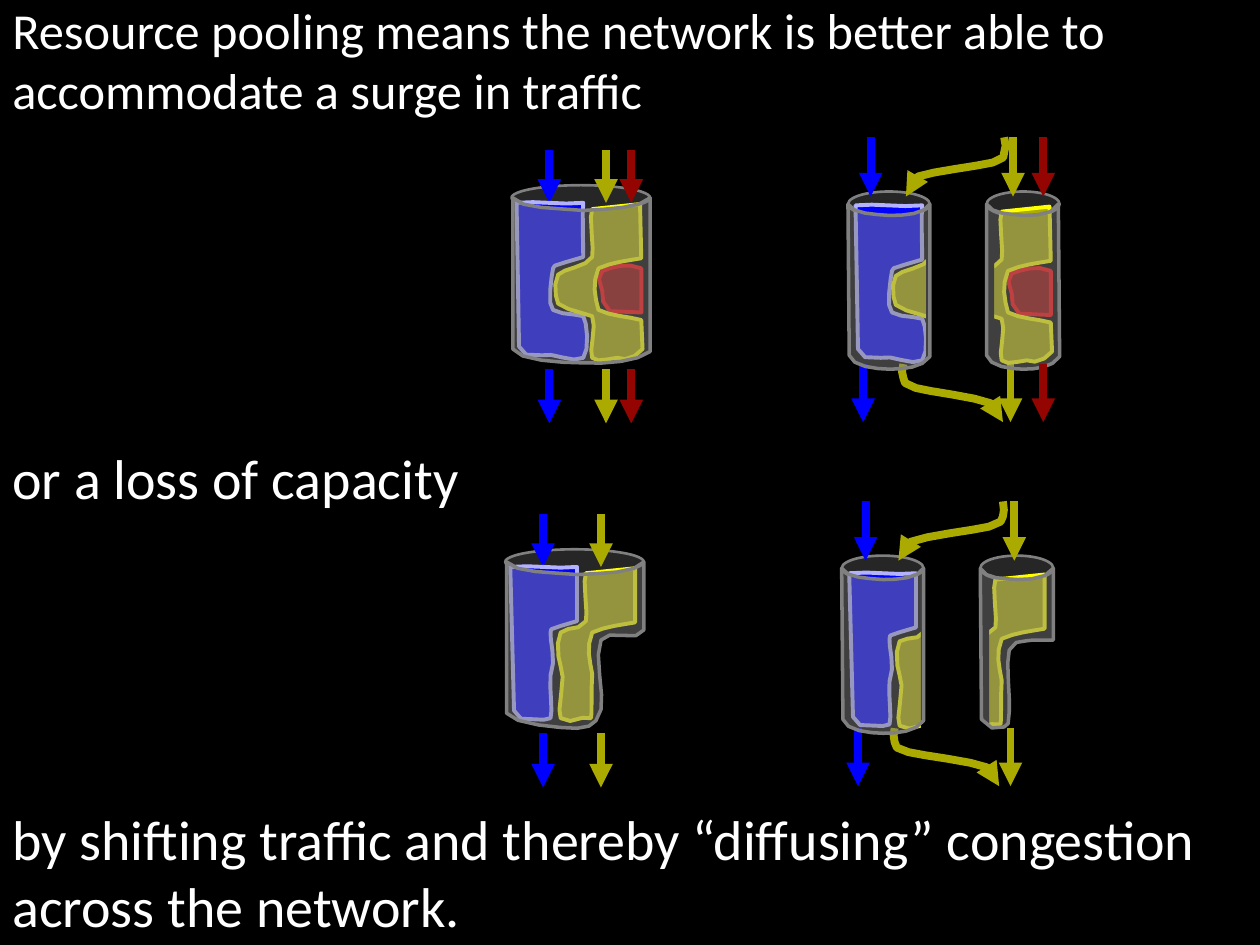
import math

import pptx
import pptx.dml.color
import pptx.enum.shapes
import pptx.enum.text
import pptx.oxml.ns
import pptx.util
from lxml import etree
from pptx.util import Inches

BLUE, YELLOW, RED = "0000FF", "AAAA00", "940400"
RIMS = {BLUE: "B2B2FF", YELLOW: "FFFF00", RED: "FF0101"}
BLACK, WHITE, GREY = "000000", "FFFFFF", "808080"
SHAPE = pptx.enum.shapes.MSO_SHAPE
CHORD, MAX_STEPS = 0.1, 4

# Outlines: a start point, then L (lines) or C (cubic curves), in inches
SURGE_RED = """5.09 2.13 C 4.98 2.08 4.86 2.12 4.78 2.15 4.71 2.17 4.78 2.25 4.78 2.31
    4.78 2.36 4.78 2.43 4.84 2.47 4.89 2.47 5.04 2.48 5.09 2.48"""
SURGE_BLUE = """4.1 1.61 C 4.27 1.59 4.45 1.63 4.63 1.61 4.62 1.65 4.63 2 4.63 2.04
    4.47 2.09 4.36 2.11 4.39 2.13 4.38 2.18 4.34 2.43 4.39 2.46
    4.44 2.5 4.59 2.49 4.63 2.51 4.66 2.55 4.68 2.78 4.63 2.84
    4.55 2.89 4.38 2.79 4.3 2.82 4.2 2.84 4.13 2.81 4.12 2.75"""
SURGE_YELLOW = """5.1 2.77 L 5.09 2.54 C 4.98 2.51 4.85 2.51 4.75 2.46
    4.72 2.35 4.7 2.25 4.75 2.13 4.86 2.08 4.98 2.07 5.09 2.05 L 5.08 1.62 4.7 1.66
    C 4.67 1.68 4.72 2.01 4.7 2.04 4.66 2.12 4.47 2.13 4.43 2.18
    4.39 2.24 4.41 2.37 4.43 2.41 4.48 2.46 4.66 2.49 4.7 2.51
    4.74 2.58 4.67 2.8 4.7 2.84 4.74 2.88 4.81 2.85 4.9 2.84 4.95 2.87 5.05 2.84 5.1 2.77"""
SURGE_SPILL = """7.78 2.78 L 7.77 2.55 C 7.66 2.52 7.53 2.52 7.43 2.47
    7.4 2.36 7.38 2.26 7.43 2.14 7.54 2.09 7.66 2.08 7.77 2.06 L 7.7 1.85
    C 7.61 1.83 7.53 1.82 7.44 1.8 7.41 1.82 7.4 2.02 7.38 2.05
    7.34 2.13 7.15 2.14 7.11 2.19 7.07 2.25 7.09 2.38 7.11 2.42
    7.16 2.47 7.34 2.5 7.38 2.52 7.43 2.59 7.41 2.75 7.44 2.79
    7.48 2.84 7.54 2.8 7.64 2.79 7.69 2.82 7.73 2.85 7.78 2.78"""
SURGE_INFLOW = """7.97 1.09 C 7.98 1.14 7.99 1.18 7.97 1.21 7.96 1.24 7.99 1.26 7.88 1.29
    7.76 1.32 7.4 1.36 7.29 1.4 7.17 1.45 7.18 1.51 7.19 1.56"""
SURGE_OUTFLOW = """7.17 2.89 C 7.16 2.93 7.15 2.97 7.17 3 7.19 3.03 7.15 3.05 7.27 3.08
    7.38 3.11 7.74 3.15 7.86 3.2 7.97 3.24 7.97 3.3 7.96 3.35"""
WIDE_PIPE = """4.07 1.57 L 4.07 2.77 C 4.11 2.86 4.45 2.88 4.63 2.88 4.81 2.89 5.06 2.87 5.16 2.79
    L 5.16 1.57 C 5.09 1.65 4.83 1.66 4.63 1.67 4.43 1.65 4.13 1.66 4.07 1.57"""
LEFT_PIPE = """6.73 1.62 L 6.74 2.82 C 6.76 2.91 6.96 2.93 7.06 2.93 7.17 2.93 7.32 2.92 7.38 2.83
    L 7.38 1.62 C 7.34 1.7 7.18 1.71 7.06 1.71 6.94 1.7 6.77 1.7 6.73 1.62"""
RIGHT_PIPE = """7.83 1.62 L 7.83 2.82 C 7.85 2.91 8.03 2.93 8.12 2.93 8.22 2.93 8.35 2.92 8.41 2.83
    L 8.4 1.62 C 8.37 1.7 8.23 1.71 8.13 1.71 8.02 1.7 7.87 1.7 7.83 1.62"""

LOSS_BLUE = """4.05 4.5 C 4.23 4.48 4.41 4.52 4.58 4.5 4.58 4.54 4.58 4.89 4.58 4.93
    4.42 4.98 4.34 4.99 4.37 5.02 4.36 5.07 4.42 5.24 4.37 5.36
    4.36 5.49 4.39 5.64 4.37 5.7 4.3 5.75 4.33 5.68 4.26 5.71 4.16 5.73 4.09 5.7 4.08 5.64"""
LOSS_YELLOW = """4.69 5.7 C 4.7 5.69 4.69 5.47 4.7 5.35 4.68 5.24 4.65 5.14 4.7 5.02
    4.81 4.97 4.93 4.96 5.04 4.94 L 5.04 4.51 4.65 4.55
    C 4.62 4.57 4.67 4.9 4.65 4.93 4.61 5.01 4.49 4.97 4.45 5.02
    4.41 5.08 4.43 5.24 4.45 5.29 4.5 5.34 4.41 5.68 4.45 5.7 4.5 5.77 4.65 5.66 4.69 5.7"""
LOSS_SPILL = """7.38 5.76 C 7.39 5.75 7.38 5.54 7.39 5.42 7.37 5.31 7.34 5.21 7.39 5.1
    7.5 5.05 7.62 5.04 7.73 5.02 L 7.66 4.74 7.42 4.74
    C 7.39 4.76 7.36 4.98 7.34 5.01 7.3 5.09 7.18 5.05 7.14 5.09
    7.1 5.15 7.12 5.31 7.14 5.36 7.19 5.41 7.1 5.74 7.14 5.76 7.19 5.83 7.35 5.72 7.38 5.76"""
LOSS_INFLOW = """7.96 3.98 C 7.97 4.03 7.97 4.07 7.96 4.1 7.94 4.13 7.97 4.15 7.85 4.18
    7.73 4.21 7.35 4.25 7.23 4.3 7.11 4.34 7.12 4.4 7.13 4.45"""
LOSS_OUTFLOW = """7.1 5.78 C 7.09 5.82 7.09 5.86 7.1 5.89 7.12 5.93 7.09 5.94 7.21 5.97
    7.33 6 7.71 6.04 7.83 6.09 7.95 6.13 7.94 6.19 7.93 6.24"""
CUT_WIDE_PIPE = """4.02 4.46 L 4.02 5.66 C 4.07 5.75 4.46 5.78 4.58 5.78 4.7 5.77 4.73 5.75 4.77 5.63
    4.8 5.52 4.71 5.19 4.77 5.08 4.82 4.98 5.07 5.11 5.11 5
    L 5.11 4.46 C 5.05 4.55 4.78 4.55 4.58 4.56 4.38 4.54 4.09 4.55 4.02 4.46"""
CUT_RIGHT_PIPE = """7.78 4.51 L 7.79 5.71 C 7.81 5.8 7.93 5.78 7.97 5.77 8.01 5.76 8 5.75 8.01 5.65
    8.02 5.54 7.98 5.25 8.01 5.16 8.05 5.06 8.15 5.1 8.2 5.08 8.26 5.08 8.31 5.08 8.36 5.08
    L 8.36 4.51 C 8.32 4.59 8.18 4.6 8.08 4.6 7.97 4.59 7.82 4.6 7.78 4.51"""


def colour(hex_code):
    return pptx.dml.color.RGBColor.from_string(hex_code)


def trace(outline, dx=0, dy=0):
    """Turn an outline into points, sampling longer curves more finely."""
    tokens = outline.split()
    points, command, pending = [(float(tokens[0]), float(tokens[1]))], "L", []
    for token in tokens[2:]:
        if token in "LC":
            command = token
            continue
        pending.append(float(token))
        if command == "L" and len(pending) == 2:
            points.append(tuple(pending))
            pending = []
        elif len(pending) == 6:
            knots = [points[-1], *zip(pending[::2], pending[1::2])]
            steps = max(1, min(MAX_STEPS, math.ceil(math.dist(knots[0], knots[3]) / CHORD)))
            for step in range(1, steps + 1):
                t = step / steps
                weights = ((1 - t) ** 3, 3 * t * (1 - t) ** 2, 3 * t * t * (1 - t), t ** 3)
                points.append(tuple(sum(w * k[i] for w, k in zip(weights, knots)) for i in (0, 1)))
            pending = []
    return [(Inches(x + dx), Inches(y + dy)) for x, y in points]


class Deck:
    font = "Calibri"

    def __init__(self):
        self.presentation = pptx.Presentation()
        self.presentation.slide_width, self.presentation.slide_height = Inches(10), Inches(7.5)
        self.slide = self.presentation.slides.add_slide(self.presentation.slide_layouts[6])
        self.slide.background.fill.solid()
        self.slide.background.fill.fore_color.rgb = colour(BLACK)

    def start_scene(self):
        self.scene = self.slide.shapes.add_group_shape().shapes

    def text(self, words, top, height, size):
        box = self.slide.shapes.add_textbox(0, Inches(top), Inches(10), Inches(height))
        box.text_frame.word_wrap = True
        box.text_frame.vertical_anchor = pptx.enum.text.MSO_ANCHOR.MIDDLE
        paragraph = box.text_frame.paragraphs[0]
        paragraph.text = words
        paragraph.font.name, paragraph.font.size = self.font, pptx.util.Pt(size)
        paragraph.font.color.rgb = colour(WHITE)

    def paint(self, shape, fill, line=None, width=1.5):
        shape.shadow.inherit = False
        if fill:
            shape.fill.solid()
            shape.fill.fore_color.rgb = colour(fill)
        else:
            shape.fill.background()
        if line:
            shape.line.color.rgb, shape.line.width = colour(line), pptx.util.Pt(width)
        else:
            shape.line.fill.background()

    def preset(self, kind, box, fill, line=None):
        self.paint(self.scene.add_shape(kind, *map(Inches, box)), fill, line)

    def outline(self, points, fill, line, width, close=True):
        builder = self.scene.build_freeform(*points[0], scale=1.0)
        builder.add_line_segments(points[1:], close=close)
        shape = builder.convert_to_shape()
        self.paint(shape, fill, line, width)
        return shape

    def water(self, course, hue, dx=0, dy=0):
        self.outline(trace(course, dx, dy), hue, RIMS[hue], 2.25)

    def pipe(self, course, dx=0, dy=0):
        glass = self.outline(trace(course, dx, dy), "7F7F7F", GREY, 2)
        tint = glass._element.spPr.find(".//" + pptx.oxml.ns.qn("a:srgbClr"))
        etree.SubElement(tint, pptx.oxml.ns.qn("a:alpha"), val="50000")

    def arrowhead(self, line):
        outline = line._element.spPr.find(pptx.oxml.ns.qn("a:ln"))
        etree.SubElement(outline, pptx.oxml.ns.qn("a:tailEnd"), type="triangle")

    def arrow(self, hue, x, top, bottom):
        line = self.scene.add_connector(pptx.enum.shapes.MSO_CONNECTOR.STRAIGHT,
                                        *map(Inches, (x, top, x, bottom)))
        line.line.color.rgb, line.line.width = colour(hue), pptx.util.Pt(4.5)
        self.arrowhead(line)
        etree.SubElement(line._element.spPr, pptx.oxml.ns.qn("a:effectLst"))

    def wide_flow(self, hue, x, dy=0):
        self.arrow(hue, x, 1.19 + dy, 1.61 + dy)
        self.arrow(hue, x, 2.93 + dy, 3.36 + dy)

    def narrow_flow(self, hue, x_in, x_out, dy=0):
        self.arrow(hue, x_in, 1.09 + dy, 1.56 + dy)
        self.arrow(hue, x_out, 2.89 + dy, 3.35 + dy)

    def bent_flow(self, course):
        self.arrowhead(self.outline(trace(course), None, YELLOW, 4.5, close=False))

    def mouths(self, dx=0, dy=0):
        for x, y, width in ((7.83, 1.52, 0.58), (6.73, 1.52, 0.65), (4.06, 1.47, 1.1)):
            self.preset(SHAPE.OVAL, (x + dx, y + dy, width, 0.2), "262626", GREY)

    def pipes(self, streams, rise, spill, mask, wide):
        """Pooled pipe first, then the water of the two separate pipes."""
        for course, hue, _ in streams:
            self.water(course, hue)
        self.pipe(wide)
        for course, hue, shift in streams:
            self.water(course, hue, shift, rise)
        self.water(spill, YELLOW)
        self.preset(SHAPE.RECTANGLE, mask, BLACK)


def main():
    deck = Deck()
    deck.text("Resource pooling means the network is better able to accommodate a surge in traffic",
              0, 0.94, 28.8)
    # Surge in traffic
    deck.start_scene()
    deck.mouths()
    deck.narrow_flow(BLUE, 6.91, 6.85)
    deck.narrow_flow(YELLOW, 8.04, 8.02)
    for bend in (SURGE_INFLOW, SURGE_OUTFLOW):
        deck.bent_flow(bend)
    for hue, x in ((RED, 5.01), (YELLOW, 4.81), (BLUE, 4.36)):
        deck.wide_flow(hue, x)
    deck.pipes(((SURGE_RED, RED, 3.25), (SURGE_BLUE, BLUE, 2.69), (SURGE_YELLOW, YELLOW, 3.25)),
               0.02, SURGE_SPILL, (7.35, 1.75, 0.54, 1.19), WIDE_PIPE)
    deck.pipe(LEFT_PIPE)
    deck.pipe(RIGHT_PIPE)
    deck.narrow_flow(RED, 8.28, 8.28)
    # Loss of capacity
    drop = 2.89
    deck.start_scene()
    deck.mouths(-0.05, drop)
    deck.narrow_flow(BLUE, 6.87, 6.81, drop)
    deck.narrow_flow(YELLOW, 8.05, 8.02, drop)
    for bend in (LOSS_INFLOW, LOSS_OUTFLOW):
        deck.bent_flow(bend)
    for hue, x in ((YELLOW, 4.77), (BLUE, 4.31)):
        deck.wide_flow(hue, x, drop)
    deck.pipes(((LOSS_BLUE, BLUE, 2.69), (LOSS_YELLOW, YELLOW, 3.25)),
               0.05, LOSS_SPILL, (7.31, 4.6, 0.54, 1.24), CUT_WIDE_PIPE)
    deck.pipe(LEFT_PIPE, -0.05, drop)
    deck.pipe(CUT_RIGHT_PIPE)
    # Remaining statements
    deck.text("or a loss of capacity", 3.44, 0.7, 32)
    deck.text("by shifting traffic and thereby “diffusing” congestion across the network.", 6.33, 1.17, 32)
    deck.presentation.save("out.pptx")


if __name__ == "__main__":
    main()
